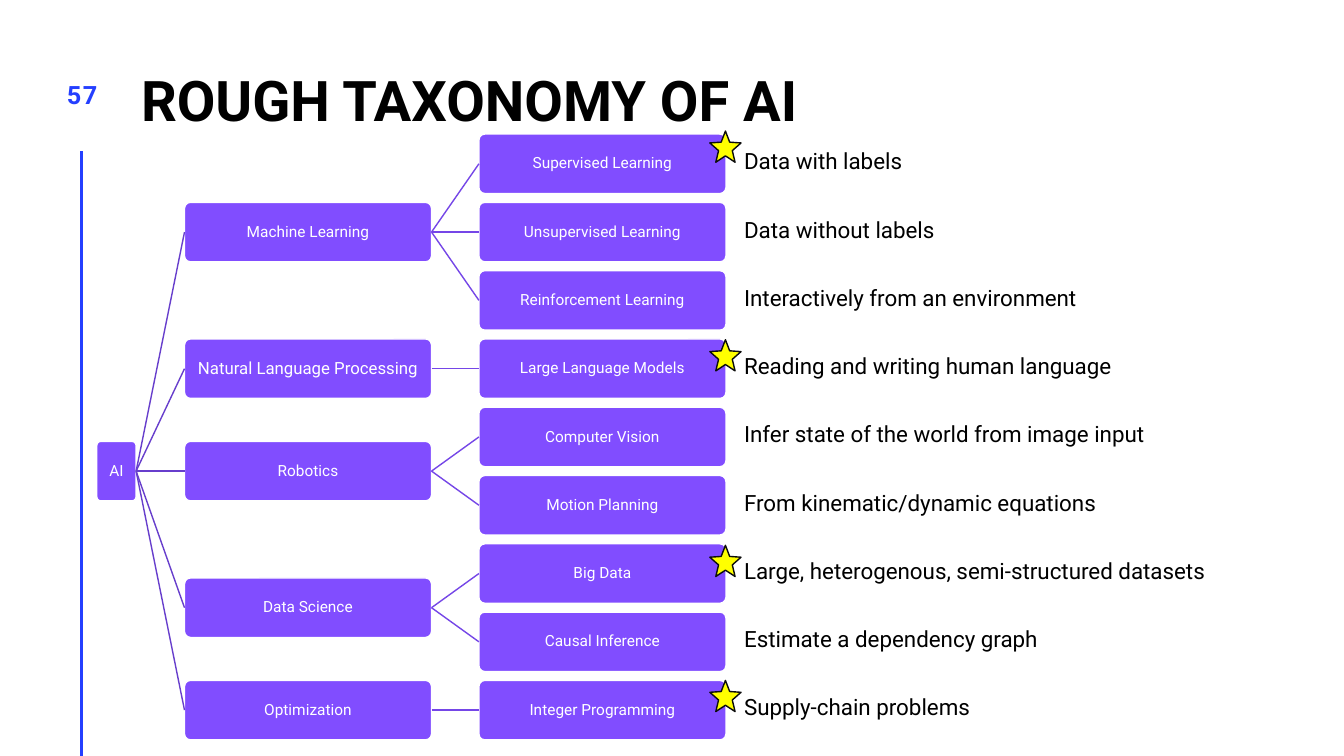
from dataclasses import dataclass
from typing import Optional

from lxml import etree
from pptx import Presentation
from pptx import util as u
from pptx.dml.color import RGBColor
from pptx.enum import shapes, text
from pptx.oxml import ns
from pptx.shapes.autoshape import Shape
from pptx.slide import Slide

Inches, Pt = u.Inches, u.Pt
FONT = "Roboto"
WHITE = RGBColor(0xFF, 0xFF, 0xFF)
BLACK = RGBColor(0, 0, 0)
BLUE = RGBColor(0x24, 0x3F, 0xFF)
PURPLE = RGBColor(0x81, 0x4D, 0xFF)
ROOT_LINE = RGBColor(0x67, 0x3E, 0xCC)
BRANCH_LINE = RGBColor(0x75, 0x46, 0xE7)
YELLOW = RGBColor(0xFF, 0xFF, 0)
STAR_EDGE = RGBColor(0x0D, 0x0D, 0x0D)

ROOT_LEFT, BRANCH_LEFT, LEAF_LEFT = 0.96, 1.83, 4.75
ROOT_WIDTH, BOX_WIDTH, BOX_HEIGHT = 0.39, 2.45, 0.59
FIRST_TOP, LAST_TOP = 1.33, 6.75
STAR_LEFT, STAR_SIZE = 7.04, 0.31


@dataclass(frozen=True)
class Leaf:
    label: str
    meaning: str
    star_top: Optional[float] = None


@dataclass(frozen=True)
class Branch:
    label: str
    leaves: tuple[Leaf, ...]
    size: int = 11


BRANCHES = (
    Branch("Machine Learning", (
        Leaf("Supervised Learning", "Data with labels", 1.3),
        Leaf("Unsupervised Learning", "Data without labels"),
        Leaf("Reinforcement Learning", "Interactively from an environment"),
    )),
    Branch("Natural Language Processing", (
        Leaf("Large Language Models", "Reading and writing human language", 3.37),
    ), 12),
    Branch("Robotics", (
        Leaf("Computer Vision", "Infer state of the world from image input"),
        Leaf("Motion Planning", "From kinematic/dynamic equations"),
    )),
    Branch("Data Science", (
        Leaf("Big Data", "Large, heterogenous, semi-structured datasets", 5.41),
        Leaf("Causal Inference", "Estimate a dependency graph"),
    )),
    Branch("Optimization", (
        Leaf("Integer Programming", "Supply-chain problems", 6.75),
    )),
)
LEAVES = [leaf for branch in BRANCHES for leaf in branch.leaves]
PITCH = (LAST_TOP - FIRST_TOP) / (len(LEAVES) - 1)


def write(frame, words: str, size: int, color: RGBColor, bold: bool = False):
    """Put one styled paragraph in a text frame and return it."""
    para = frame.paragraphs[0]
    para.text = words
    font = para.font
    font.name, font.size, font.bold = FONT, Pt(size), bold
    font.color.rgb = color
    return para


def set_insets(frame, inset: float) -> None:
    """Wrap the text and give all four sides the same inset."""
    frame.word_wrap = True
    frame.margin_left = frame.margin_right = Inches(inset)
    frame.margin_top = frame.margin_bottom = Inches(inset)


def add_label(page: Slide, left: float, top: float, width: float, height: float,
              words: str, size: int, color: RGBColor):
    """Add a bold text box without insets and return its paragraph."""
    box = page.shapes.add_textbox(Inches(left), Inches(top), Inches(width), Inches(height))
    set_insets(box.text_frame, 0)
    return write(box.text_frame, words, size, color, bold=True)


def add_figure(page: Slide, kind: shapes.MSO_SHAPE, left: float, top: float,
               width: float, height: float, fill: RGBColor, edge: RGBColor) -> Shape:
    """Add a filled and outlined preset shape."""
    figure = page.shapes.add_shape(kind, Inches(left), Inches(top), Inches(width), Inches(height))
    figure.shadow.inherit = False
    figure.fill.solid()
    figure.fill.fore_color.rgb = fill
    figure.line.color.rgb = edge
    figure.line.width = Pt(1)
    return figure


def add_box(page: Slide, left: float, top: float, width: float,
            words: str, size: int = 11) -> Shape:
    """Add a rounded node of the tree."""
    box = add_figure(page, shapes.MSO_SHAPE.ROUNDED_RECTANGLE, left, top, width, BOX_HEIGHT,
                     PURPLE, WHITE)
    box.adjustments[0] = 0.1
    set_insets(box.text_frame, 0.01)
    box.text_frame.vertical_anchor = text.MSO_ANCHOR.MIDDLE
    para = write(box.text_frame, words, size, WHITE)
    para.alignment = text.PP_ALIGN.CENTER
    para.line_spacing = 0.9
    return box


def add_line(page: Slide, start: tuple[float, float], end: tuple[float, float],
             color: RGBColor, width: float):
    """Add a straight line without a shadow."""
    line = page.shapes.add_connector(shapes.MSO_CONNECTOR.STRAIGHT,
                                     *map(Inches, start), *map(Inches, end))
    line.line.color.rgb = color
    line.line.width = Pt(width)
    etree.SubElement(line._element.spPr, ns.qn("a:effectLst"))
    return line


def join(page: Slide, parent: Shape, child: Shape, color: RGBColor) -> None:
    """Link the right side of a parent to the left side of a child."""
    link = add_line(page, (0, 0), (1, 1), color, 1)
    link.begin_connect(parent, 3)
    link.end_connect(child, 1)


def add_tree(page: Slide) -> None:
    """Draw the tree, each parent centred on its children."""
    branch_boxes, branch_tops, row = [], [], 0
    for branch in BRANCHES:
        tops = [FIRST_TOP + PITCH * (row + i) for i in range(len(branch.leaves))]
        row += len(tops)
        branch_tops.append((tops[0] + tops[-1]) / 2)
        parent = add_box(page, BRANCH_LEFT, branch_tops[-1], BOX_WIDTH, branch.label, branch.size)
        branch_boxes.append(parent)
        for leaf, top in zip(branch.leaves, tops):
            child = add_box(page, LEAF_LEFT, top, BOX_WIDTH, leaf.label)
            join(page, parent, child, BRANCH_LINE)
    root = add_box(page, ROOT_LEFT, (branch_tops[0] + branch_tops[-1]) / 2, ROOT_WIDTH, "AI")
    for box in branch_boxes:
        join(page, root, box, ROOT_LINE)


def add_meanings(page: Slide) -> None:
    """Add the table that explains each leaf."""
    table = page.shapes.add_table(len(LEAVES), 1, Inches(7.28), Inches(1.27),
                                  Inches(5.02), Inches(PITCH * len(LEAVES))).table
    table.first_row = table.horz_banding = False
    for row, leaf in enumerate(LEAVES):
        cell = table.cell(row, 0)
        cell.fill.background()
        cell.vertical_anchor = text.MSO_ANCHOR.MIDDLE
        write(cell.text_frame, leaf.meaning, 16, BLACK)


def main() -> None:
    """Build the taxonomy slide."""
    deck = Presentation()
    deck.slide_width, deck.slide_height = Inches(13.33), Inches(7.5)
    page = deck.slides.add_slide(deck.slide_layouts[6])
    add_line(page, (0.81, 1.5), (0.81, 7.5), BLUE, 2)
    title = add_label(page, 1.4, 0.76, 11.03, 0.6, "ROUGH TAXONOMY OF AI", 40, BLACK)
    title.line_spacing = Pt(40)
    add_tree(page)
    number = add_label(page, 0.53, 0.79, 0.57, 0.57, "57", 18, BLUE)
    number.alignment = text.PP_ALIGN.CENTER
    number.runs[0]._r.get_or_add_rPr().set("spc", "100")
    add_meanings(page)
    for leaf in LEAVES:
        if leaf.star_top is not None:
            add_figure(page, shapes.MSO_SHAPE.STAR_5_POINT, STAR_LEFT, leaf.star_top,
                       STAR_SIZE, STAR_SIZE, YELLOW, STAR_EDGE).adjustments[0] = 0.22
    deck.save("out.pptx")


if __name__ == "__main__":
    main()
